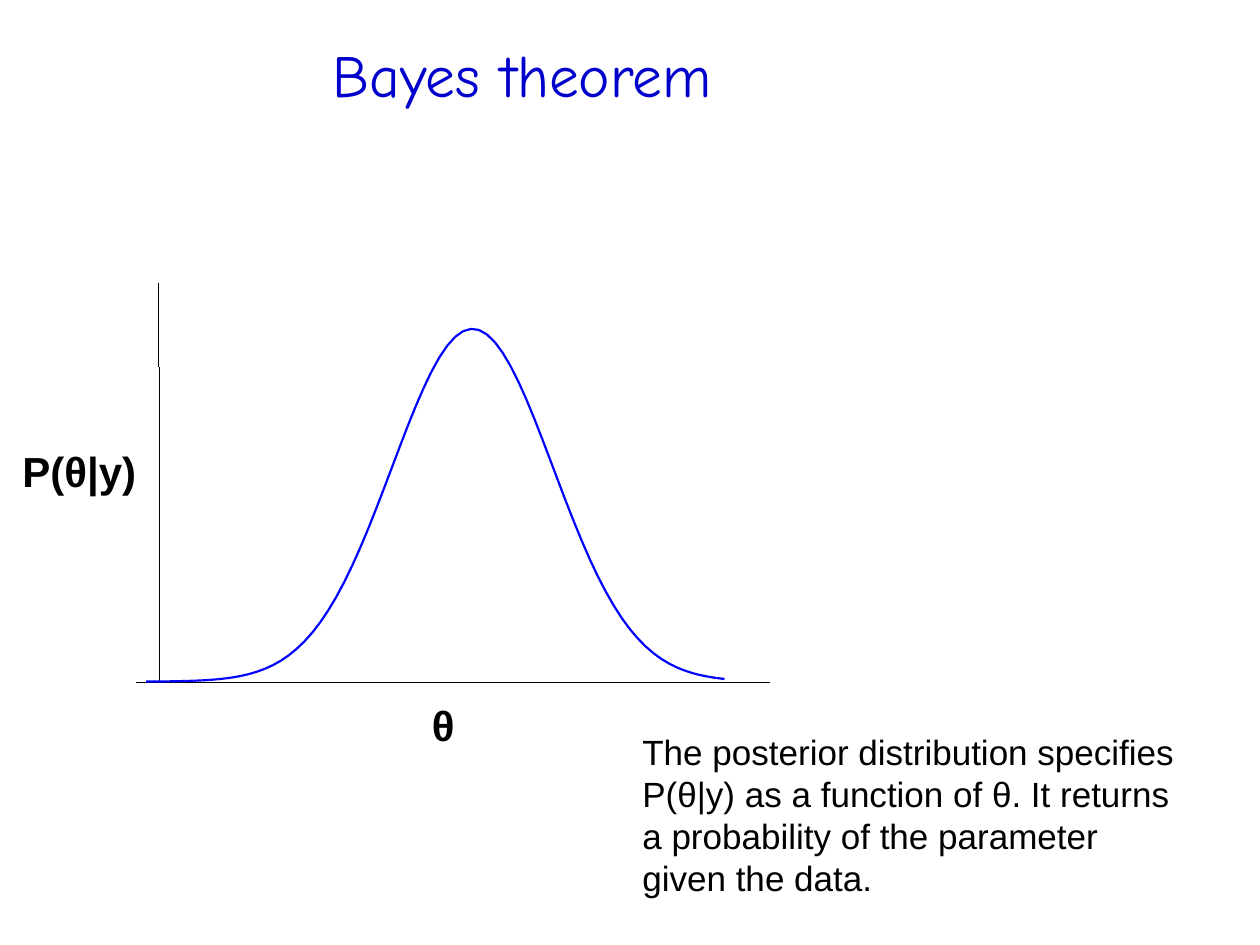
from dataclasses import dataclass
from itertools import pairwise
from math import exp

from lxml import etree
from pptx import Presentation
from pptx.dml.color import RGBColor as RGB
from pptx.enum.shapes import MSO_CONNECTOR as Connector
from pptx.enum.text import MSO_ANCHOR as Anchor, MSO_AUTO_SIZE as AutoSize, PP_ALIGN as Align
from pptx.oxml.ns import qn
from pptx.util import Pt

SCALE = 9144  # EMU per px, 100 px to the inch


def px(*lengths):
    return [round(n * SCALE) for n in lengths]


@dataclass(frozen=True)
class Theme:
    title_color: RGB = RGB(0, 0, 0xCC)
    curve_color: RGB = RGB(0, 0, 0xFF)
    ink: RGB = RGB(0, 0, 0)
    title_font: str = "Comic Neue"
    body_font: str = "Arial"
    title_size: int = 34
    label_size: int = 24
    body_size: int = 20
    axis_width: float = 0
    curve_width: float = 1.25


class SlideBuilder:
    def __init__(self, prs, theme):
        self.theme = theme
        self.s = prs.slides.add_slide(prs.slide_layouts[5])

    def fill_text(self, tf, lines, font, color, frame, align=None):
        for name, value in frame.items():
            setattr(tf, name, value)
        for i, line in enumerate(lines):
            p = tf.paragraphs[0] if i == 0 else tf.add_paragraph()
            p.alignment = align
            r = p.add_run()
            r.text = line
            for name, value in font.items():
                setattr(r.font, name, value)
            r.font.color.rgb = color

    def title(self, text, x, y, w, h):
        sp = self.s.shapes.title
        sp.left, sp.top, sp.width, sp.height = px(x, y, w, h)
        t = self.theme
        self.fill_text(sp.text_frame, [text],
                       {"name": t.title_font, "size": Pt(t.title_size)}, t.title_color,
                       {"vertical_anchor": Anchor.BOTTOM, "auto_size": AutoSize.NONE},
                       Align.CENTER)

    def text(self, lines, x, y, w, h, size, bold=False, wrap=True):
        sp = self.s.shapes.add_textbox(*px(x, y, w, h))
        self.fill_text(sp.text_frame, lines,
                       {"name": self.theme.body_font, "size": Pt(size), "bold": bold},
                       self.theme.ink,
                       {"word_wrap": wrap, "auto_size": AutoSize.SHAPE_TO_FIT_TEXT})

    def line(self, shapes, start, end, color, width):
        cxn = shapes.add_connector(Connector.STRAIGHT, *px(*start, *end))
        cxn.line.color.rgb = color
        cxn.line.width = Pt(width)
        etree.SubElement(cxn._element.spPr, qn("a:effectLst"))
        # Without the theme style a zero width stays a hairline
        cxn._element.remove(cxn._element.find(qn("p:style")))

    def axis(self, shapes, start, end):
        self.line(shapes, start, end, self.theme.ink, self.theme.axis_width)

    def curve(self, shapes, points):
        for start, end in pairwise(points):
            self.line(shapes, start, end, self.theme.curve_color, self.theme.curve_width)


def bell_points(left, right, steps, mean, sigma, base, height):
    for i in range(steps + 1):
        x = left + (right - left) * i / steps
        yield x, base - height * exp(-((x - mean) / sigma) ** 2 / 2)


def main():
    prs = Presentation()
    prs.slide_width, prs.slide_height = px(1000, 750)
    theme = Theme()
    slide = SlideBuilder(prs, theme)

    # Title
    slide.title("Bayes theorem", 33, 14, 763, 78)

    # Axes and posterior density
    slide.axis(slide.s.shapes, (108, 542), (611, 542))
    plot = slide.s.shapes.add_group_shape().shapes
    slide.axis(plot, (126, 225), (127, 541))
    slide.curve(plot, bell_points(left=116, right=575, steps=73, mean=375,
                                  sigma=64, base=541, height=280))

    # Axis labels
    slide.text(["θ"], 333, 550, 83, 51, theme.label_size, bold=True)
    slide.text(["P(θ|y)"], 8, 349, 125, 51, theme.label_size, bold=True)

    # Explanation
    slide.text(["The posterior distribution specifies",
                "P(θ|y) as a function of θ. It returns",
                "a probability of the parameter",
                "given the data."], 500, 575, 446, 145, theme.body_size, wrap=False)

    prs.save("out.pptx")


if __name__ == "__main__":
    main()
